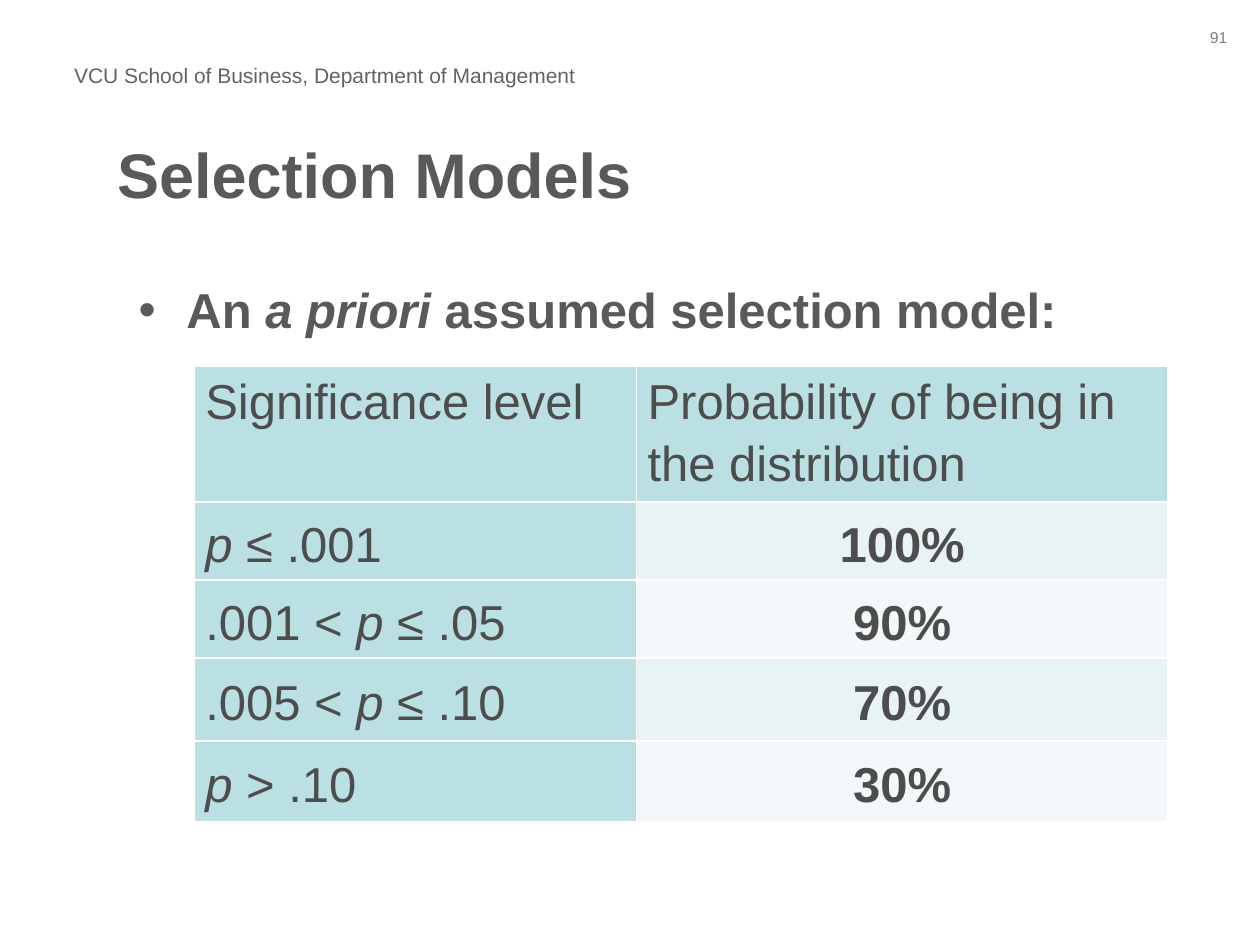
"""Build the Selection Models slide with its table of assumed probabilities."""
from lxml import etree
from pptx import Presentation
from pptx.dml.color import RGBColor
from pptx.enum.text import MSO_ANCHOR, MSO_AUTO_SIZE, PP_ALIGN
from pptx.oxml import parse_xml
from pptx.oxml.ns import nsdecls, qn
from pptx.util import Inches, Pt

LEFT, CENTER, RIGHT = PP_ALIGN.LEFT, PP_ALIGN.CENTER, PP_ALIGN.RIGHT
TOP, MIDDLE = MSO_ANCHOR.TOP, MSO_ANCHOR.MIDDLE
NO_AUTOFIT = MSO_AUTO_SIZE.NONE
FONT = "Arial"
HEADING_GRAY = RGBColor(0x59, 0x59, 0x59)
TABLE_GRAY = RGBColor(0x4D, 0x4D, 0x4D)
SCHOOL_GRAY = RGBColor(0x62, 0x64, 0x64)
NUMBER_GRAY = RGBColor(0x80, 0x80, 0x80)
TEAL = RGBColor(0xBB, 0xE0, 0xE3)
BANDS = RGBColor(0xE7, 0xF3, 0xF4), RGBColor(0xF3, 0xF9, 0xFA)


def write(paragraph, text, size, color, bold=False, align=LEFT):
    """Fill a paragraph, setting the parts between asterisks in italics."""
    paragraph.alignment = align
    for index, part in enumerate(text.split("*")):
        if part:
            run = paragraph.add_run()
            run.text = part
            run.font.name = FONT
            run.font.size = Pt(size)
            run.font.bold = bold
            run.font.italic = index % 2 == 1
            run.font.color.rgb = color


def place(shape, left, top, width, height):
    """Set a shape's position and size in inches."""
    shape.left, shape.top = Inches(left), Inches(top)
    shape.width, shape.height = Inches(width), Inches(height)


deck = Presentation()
deck.slide_width, deck.slide_height = Inches(10), Inches(7.5)
slide = deck.slides.add_slide(deck.slide_layouts[1])

page_header = [
    ("91", (9.17, 0.17, 0.67, 0.25), 9, NUMBER_GRAY, RIGHT),
    ("VCU School of Business, Department of Management",
     (0.33, 0.45, 4.5, 0.3), 12, SCHOOL_GRAY, CENTER),
]
for text, area, size, color, align in page_header:
    label = slide.shapes.add_textbox(*map(Inches, area))
    label.text_frame.word_wrap = True
    write(label.text_frame.paragraphs[0], text, size, color, align=align)

heading = slide.shapes.title
place(heading, 0.83, 0.75, 8.42, 1.25)
heading.text_frame.auto_size = NO_AUTOFIT
heading.text_frame.vertical_anchor = MIDDLE
write(heading.text_frame.paragraphs[0], "Selection Models", 36, HEADING_GRAY, bold=True)

premise = slide.placeholders[1]
place(premise, 1, 2.17, 8.25, 4.5)
premise.text_frame.auto_size = NO_AUTOFIT
bullet_line = premise.text_frame.paragraphs[0]
bullet_format = bullet_line._p.get_or_add_pPr()
bullet_format.set("marL", str(Inches(0.38)))
bullet_format.set("indent", str(Inches(-0.38)))
etree.SubElement(bullet_format, qn("a:buChar")).set("char", "•")
bullet_line.space_before = Pt(0)
write(bullet_line, "An *a priori *assumed selection model:", 28, HEADING_GRAY, bold=True)

model = [
    ("Significance level", "Probability of being in the distribution"),
    ("*p *≤ .001", "100%"),
    (".001 < *p* ≤ .05", "90%"),
    (".005 < *p* ≤ .10", "70%"),
    ("*p* > .10", "30%"),
]
column_widths = 3.51, 4.22
row_heights = 1, 0.62, 0.62, 0.66, 0.64
frame = slide.shapes.add_table(
    len(model), len(column_widths), Inches(1.54), Inches(2.91),
    Inches(sum(column_widths)), Inches(sum(row_heights)))
table = frame.table
for column, width in zip(table.columns, column_widths):
    column.width = Inches(width)

for row, (values, height) in enumerate(zip(model, row_heights)):
    table.rows[row].height = Inches(height)
    for col, value in enumerate(values):
        cell = table.cell(row, col)
        is_probability = row > 0 and col == 1
        for side in ("lnL", "lnR", "lnT", "lnB"):
            cell._tc.get_or_add_tcPr().append(parse_xml(
                f'<a:{side} {nsdecls("a")} w="{Pt(1)}"><a:solidFill>'
                f'<a:srgbClr val="FFFFFF"/></a:solidFill></a:{side}>'))
        cell.fill.solid()
        cell.fill.fore_color.rgb = BANDS[(row - 1) % 2] if is_probability else TEAL
        cell.margin_left = cell.margin_right = Inches(0.09)
        cell.margin_top = cell.margin_bottom = 0
        cell.vertical_anchor = MIDDLE if row else TOP
        line = cell.text_frame.paragraphs[0]
        line.line_spacing = 1.15
        write(line, value, 28, TABLE_GRAY, bold=is_probability,
              align=CENTER if is_probability else LEFT)

deck.save("out.pptx")
